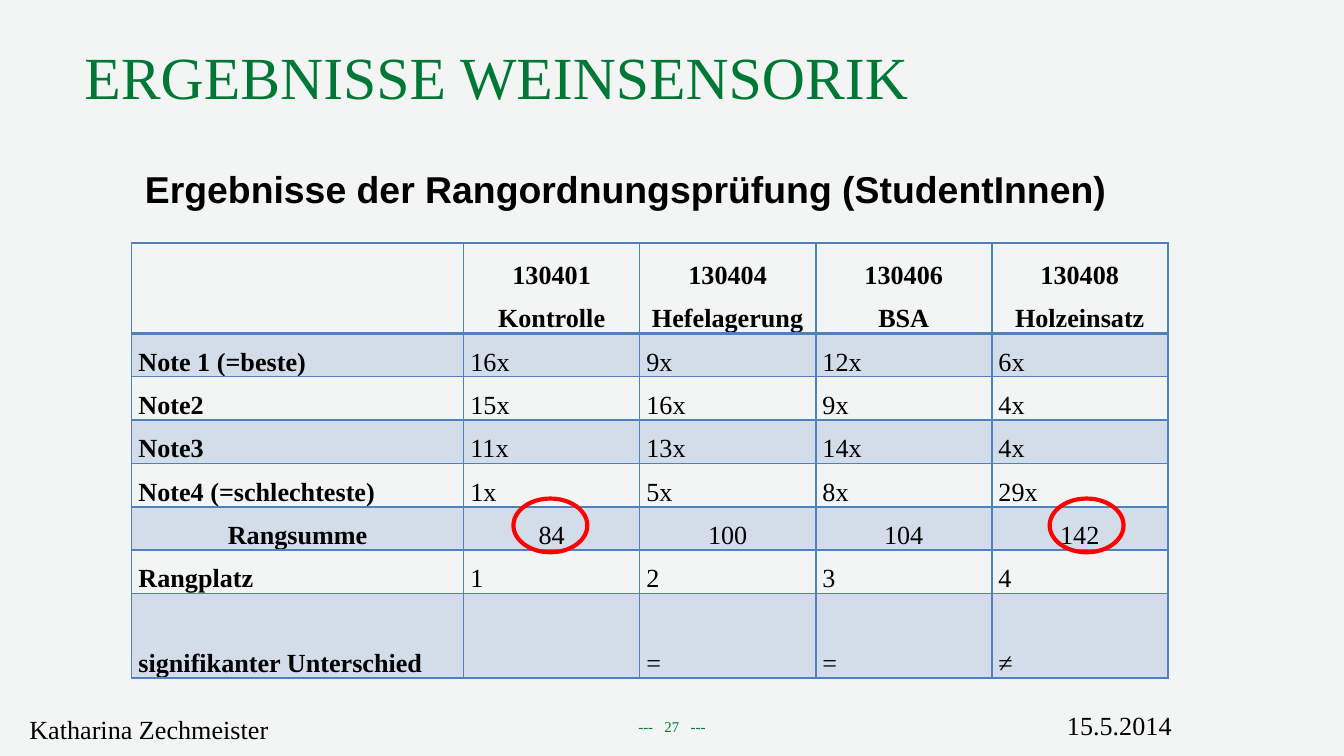
from dataclasses import dataclass

from lxml.etree import SubElement
from pptx import Presentation
from pptx.dml.color import RGBColor
from pptx.enum.shapes import MSO_SHAPE
from pptx.enum.text import MSO_ANCHOR, PP_ALIGN
from pptx.oxml.ns import qn
from pptx.slide import Slide
from pptx.table import _Cell
from pptx.util import Inches, Pt

BACKGROUND = RGBColor(0xF3, 0xF4, 0xF4)
GREEN = RGBColor(0x00, 0x78, 0x35)
BLACK = RGBColor(0x00, 0x00, 0x00)
BLUE = RGBColor(0x4F, 0x81, 0xBD)
RED = RGBColor(0xFF, 0x00, 0x00)
SERIF = "Times New Roman"

COLUMN_WIDTHS = [2.47] + [1.31] * 4
ROW_HEIGHTS = [0.67] + [0.3] * 6 + [0.63]
TABLE_ROWS = [
    ["", "130401\nKontrolle", "130404\nHefelagerung", "130406\nBSA", "130408\nHolzeinsatz"],
    ["Note 1 (=beste)", "16x", "9x", "12x", "6x"],
    ["Note2", "15x", "16x", "9x", "4x"],
    ["Note3", "11x", "13x", "14x", "4x"],
    ["Note4 (=schlechteste)", "1x", "5x", "8x", "29x"],
    ["Rangsumme", "84", "100", "104", "142"],
    ["Rangplatz", "1", "2", "3", "4"],
    ["signifikanter Unterschied", "", "=", "=", "≠"],
]
CENTERED_ROWS = (0, 5)


@dataclass
class Label:
    pieces: list[str]
    left: float
    top: float
    width: float
    height: float
    size: float = 14
    color: RGBColor = BLACK
    font: str = SERIF
    bold: bool = False
    anchor: MSO_ANCHOR = MSO_ANCHOR.TOP
    align: PP_ALIGN = PP_ALIGN.LEFT
    bottom_inset: float = 0.05


LABELS = [
    Label(["ERGEBNISSE WEINSENSORIK"], 0.53, 0.2, 7.01, 0.66, 32, GREEN,
          anchor=MSO_ANCHOR.BOTTOM, bottom_inset=0.03),
    Label(["Ergebnisse der Rangordnungsprüfung (StudentInnen)"], 0.98, 1.19, 7.42, 0.74, 20,
          font="Arial", bold=True),
    Label(["15.5.2014"], 7.84, 5.23, 1.89, 0.39),
    Label(["Katharina Zechmeister"], 0.12, 5.26, 4.88, 0.39),
    Label(["---", " ", "27", " ", "---"], 4.31, 5.29, 1.38, 0.19, 8, GREEN,
          align=PP_ALIGN.CENTER),
]


def add_label(slide: Slide, label: Label) -> None:
    box = slide.shapes.add_textbox(Inches(label.left), Inches(label.top),
                                   Inches(label.width), Inches(label.height))
    frame = box.text_frame
    frame.word_wrap = True
    frame.vertical_anchor = label.anchor
    frame.margin_bottom = Inches(label.bottom_inset)
    paragraph = frame.paragraphs[0]
    paragraph.alignment = label.align
    for piece in label.pieces:
        run = paragraph.add_run()
        run.text = piece
        if piece == " ":
            # Widen the gap around the page number by 4 points
            run.font._element.set("spc", "400")
    paragraph.font.name = label.font
    paragraph.font.size = Pt(label.size)
    paragraph.font.bold = label.bold
    paragraph.font.color.rgb = label.color


def set_border(cell: _Cell, side: str, width: float) -> None:
    line = SubElement(cell._tc.get_or_add_tcPr(), qn(f"a:{side}"), w=str(Pt(width)))
    fill = SubElement(line, qn("a:solidFill"))
    SubElement(fill, qn("a:srgbClr"), val=str(BLUE))


def fill_cell(cell: _Cell, text: str, row: int, column: int) -> None:
    cell.margin_left = cell.margin_right = Inches(0.05)
    cell.margin_top = cell.margin_bottom = 0
    cell.vertical_anchor = MSO_ANCHOR.BOTTOM
    cell.text = text
    for paragraph in cell.text_frame.paragraphs:
        paragraph.alignment = PP_ALIGN.CENTER if row in CENTERED_ROWS else PP_ALIGN.LEFT
        paragraph.line_spacing = 1.5
        paragraph.font.name = SERIF
        paragraph.font.size = Pt(14)
        paragraph.font.bold = row == 0 or column == 0
        paragraph.font.color.rgb = BLACK

    # Borders come before the fill in the cell properties
    set_border(cell, "lnL", 1)
    set_border(cell, "lnR", 1)
    set_border(cell, "lnT", 2 if row == 1 else 1)
    set_border(cell, "lnB", 2 if row == 0 else 1)
    if row % 2:
        cell.fill.solid()
        cell.fill.fore_color.rgb = BLUE
        color = cell._tc.tcPr.find(qn("a:solidFill")).find(qn("a:srgbClr"))
        SubElement(color, qn("a:alpha"), val="20000")
    else:
        cell.fill.background()


def add_result_table(slide: Slide) -> None:
    table = slide.shapes.add_table(len(ROW_HEIGHTS), len(COLUMN_WIDTHS), Inches(0.98), Inches(1.81),
                                   Inches(sum(COLUMN_WIDTHS)), Inches(sum(ROW_HEIGHTS))).table
    table.first_row = table.horz_banding = False
    for column, width in zip(table.columns, COLUMN_WIDTHS):
        column.width = Inches(width)
    for row, height in zip(table.rows, ROW_HEIGHTS):
        row.height = Inches(height)
    for row_index, texts in enumerate(TABLE_ROWS):
        for column_index, text in enumerate(texts):
            fill_cell(table.cell(row_index, column_index), text, row_index, column_index)


def add_highlight(slide: Slide, left: float) -> None:
    ellipse = slide.shapes.add_shape(MSO_SHAPE.OVAL, Inches(left), Inches(3.71),
                                     Inches(0.55), Inches(0.4))
    ellipse.shadow.inherit = False
    ellipse.fill.background()
    ellipse.line.color.rgb = RED
    ellipse.line.width = Pt(2.25)


def main() -> None:
    presentation = Presentation()
    # Widescreen format, 16:9
    presentation.slide_width = Inches(10)
    presentation.slide_height = Inches(10 * 9 / 16)
    slide = presentation.slides.add_slide(presentation.slide_layouts[6])
    slide.background.fill.solid()
    slide.background.fill.fore_color.rgb = BACKGROUND

    # Results table
    add_result_table(slide)

    # Title, subtitle and footer
    for label in LABELS:
        add_label(slide, label)

    # Best and worst rank sums
    for left in (3.82, 7.81):
        add_highlight(slide, left)

    presentation.save("out.pptx")


if __name__ == "__main__":
    main()
